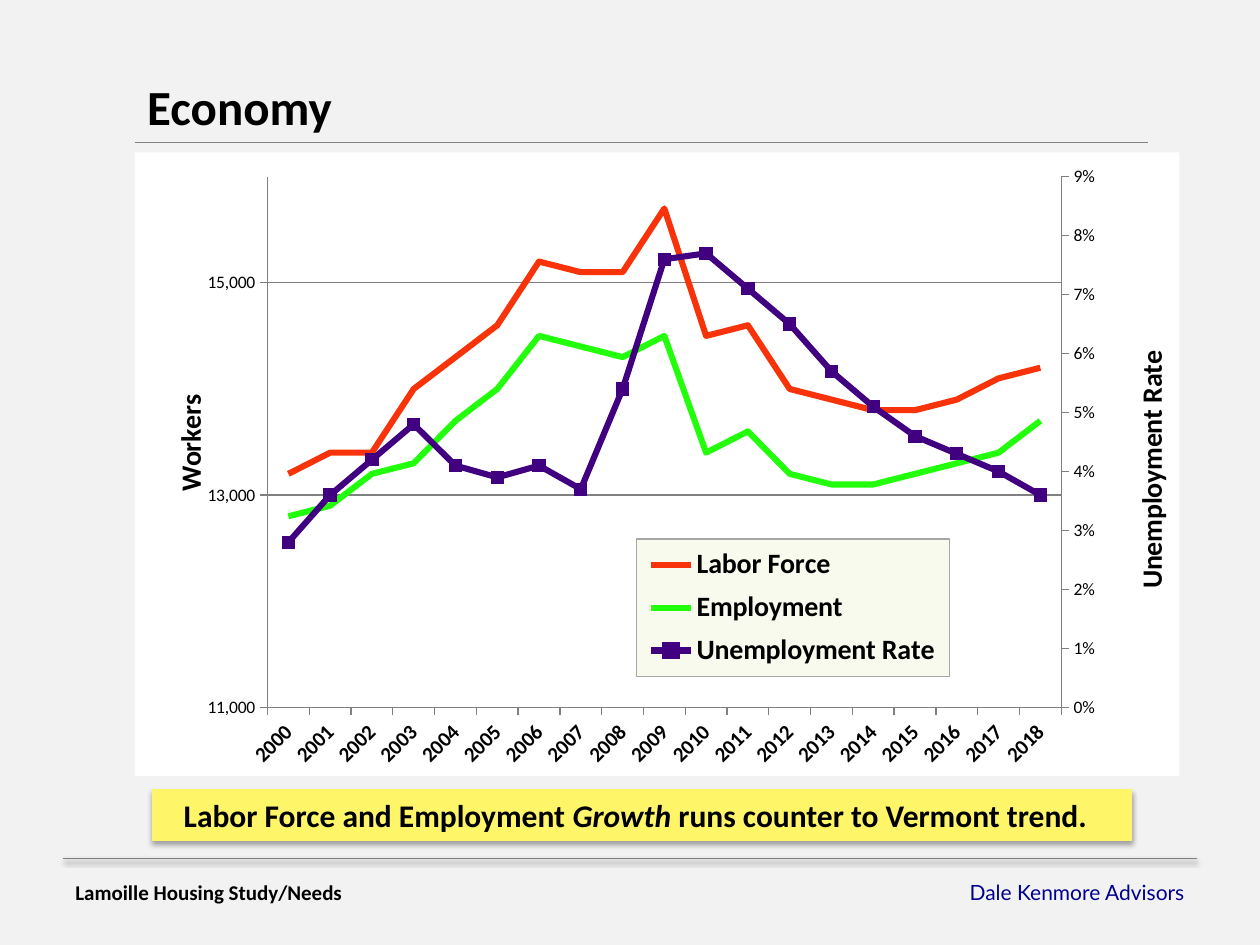
from copy import deepcopy
from lxml import etree
from pptx import Presentation
from pptx.chart.axis import ValueAxis
from pptx.chart.data import CategoryChartData
from pptx.dml.color import RGBColor
from pptx.enum.chart import XL_CHART_TYPE, XL_LEGEND_POSITION, XL_MARKER_STYLE
from pptx.enum.shapes import MSO_CONNECTOR, MSO_SHAPE
from pptx.enum.text import MSO_AUTO_SIZE, PP_ALIGN
from pptx.oxml import parse_xml
from pptx.oxml.ns import nsdecls, qn
from pptx.util import Inches, Pt

COLORS = {
    "page": "F2F2F2", "white": "FFFFFF", "ink": "000000", "rule": "808080",
    "navy": "000090", "note": "FFF569", "labor": "F83309", "jobs": "22FE0B",
    "rate": "400080", "key": "F8FAED", "edge": "A6A6A6",
}
YEARS = [str(year) for year in range(2000, 2019)]
LABOR = [13200, 13400, 13400, 14000, 14300, 14600, 15200, 15100, 15100, 15700,
         14500, 14600, 14000, 13900, 13800, 13800, 13900, 14100, 14200]
JOBS = [12800, 12900, 13200, 13300, 13700, 14000, 14500, 14400, 14300, 14500,
        13400, 13600, 13200, 13100, 13100, 13200, 13300, 13400, 13700]
RATE = [0.028, 0.036, 0.042, 0.048, 0.041, 0.039, 0.041, 0.037, 0.054, 0.076,
        0.077, 0.071, 0.065, 0.057, 0.051, 0.046, 0.043, 0.04, 0.036]


def color(name):
    return RGBColor.from_string(COLORS[name])


def shade(shape, alpha):
    """Give the shape a soft shadow below it, or none when alpha is 0."""
    glow = (f'<a:outerShdw blurRad="{Pt(3.1)}" dist="{Pt(1.8)}" dir="5400000" rotWithShape="0">'
            f'<a:srgbClr val="{COLORS["ink"]}"><a:alpha val="{alpha * 1000}"/></a:srgbClr>'
            '</a:outerShdw>') if alpha else ""
    props = shape._element.spPr
    for old in props.findall(qn("a:effectLst")):
        props.remove(old)
    props.append(parse_xml(f'<a:effectLst {nsdecls("a")}>{glow}</a:effectLst>'))


def place(node, left, top, width=None, height=None, inner=False):
    """Set a manual layout, in fractions of the chart."""
    for old in node.findall(qn("c:layout")):
        node.remove(old)
    parts = [("layoutTarget", "inner")] if inner else []
    parts += [("xMode", "edge"), ("yMode", "edge"), ("x", left), ("y", top)]
    if width:
        parts += [("w", width), ("h", height)]
    body = "".join(f'<c:{tag} val="{val}"/>' for tag, val in parts)
    layout = parse_xml(f'<c:layout {nsdecls("c")}><c:manualLayout>{body}'
                       '</c:manualLayout></c:layout>')
    over = node.find(qn("c:overlay"))
    if over is None:
        node.insert(0, layout)
    else:
        over.addprevious(layout)


def paint(node, fill, line=None):
    """Fill and outline a chart part that already has its text style."""
    edge = (f'<a:solidFill><a:srgbClr val="{COLORS[line]}"/></a:solidFill>'
            if line else "<a:noFill/>")
    node.find(qn("c:txPr")).addprevious(parse_xml(
        f'<c:spPr {nsdecls("c", "a")}><a:solidFill><a:srgbClr val="{COLORS[fill]}"/>'
        f'</a:solidFill><a:ln w="{Pt(0.75)}">{edge}</a:ln></c:spPr>'))


def title(axis, text, left, top):
    axis.has_title = True
    frame = axis.axis_title.text_frame
    frame.text = text
    font = frame.paragraphs[0].font
    font.size, font.bold = Pt(16), True
    body = frame._txBody.find(qn("a:bodyPr"))
    body.set("rot", "-5400000")
    body.set("vert", "horz")
    place(axis.axis_title._element, left, top)


def ruled(form):
    form.line.color.rgb = color("rule")
    form.line.width = Pt(0.75)


def split(chart):
    """Move the last series to a second axis on the right, and return that axis."""
    area = chart._chartSpace.chart.plotArea
    first = area.find(qn("c:lineChart"))
    other = deepcopy(first)
    for node in other.findall(qn("c:ser"))[:-1]:
        other.remove(node)
    first.remove(first.findall(qn("c:ser"))[-1])
    first.addnext(other)
    cat, val = (deepcopy(area.find(qn(tag))) for tag in ("c:catAx", "c:valAx"))
    ids = {node.get("val"): str(7001 + i)
           for i, node in enumerate(other.findall(qn("c:axId")))}
    for part in (other, cat, val):
        for node in part.iter(qn("c:axId"), qn("c:crossAx")):
            node.set("val", ids[node.get("val")])
    last = area.findall(qn("c:valAx"))[-1]
    last.addnext(val)
    val.addnext(cat)
    cat.find(qn("c:delete")).set("val", "1")
    val.find(qn("c:axPos")).set("val", "r")
    val.find(qn("c:crosses")).set("val", "max")
    return ValueAxis(val)


class Deck:
    def __init__(self, font="Calibri"):
        self.font = font
        self.show = Presentation()
        self.show.slide_width, self.show.slide_height = Inches(10), Inches(7.5)
        self.slide = self.show.slides.add_slide(self.show.slide_layouts[6])
        self.slide.background.fill.solid()
        self.slide.background.fill.fore_color.rgb = color("page")

    def text(self, box, runs, size, ink="ink", bold=True, face=None, align=PP_ALIGN.LEFT):
        """Write (text, italic) runs in one paragraph."""
        frame = self.slide.shapes.add_textbox(*map(Inches, box)).text_frame
        frame.word_wrap = True
        frame.auto_size = MSO_AUTO_SIZE.SHAPE_TO_FIT_TEXT
        para = frame.paragraphs[0]
        para.alignment = align
        font = para.font
        font.name, font.size, font.bold = face or self.font, Pt(size), bold
        font.color.rgb = color(ink)
        for words, slant in runs:
            run = para.add_run()
            run.text = words
            if slant:
                run.font.italic = True

    def rule(self, left, right, top, width, alpha=0):
        line = self.slide.shapes.add_connector(
            MSO_CONNECTOR.STRAIGHT, *map(Inches, (left, top, right, top)))
        line.line.color.rgb = color("rule")
        line.line.width = Pt(width)
        shade(line, alpha)

    def band(self, box, fill):
        shape = self.slide.shapes.add_shape(MSO_SHAPE.RECTANGLE, *map(Inches, box))
        shape.fill.solid()
        shape.fill.fore_color.rgb = shape.line.color.rgb = color(fill)
        shape.line.width = Pt(0.75)
        shade(shape, 35)

    def chart(self, box):
        data = CategoryChartData()
        data.categories = YEARS
        data.add_series("Labor Force", LABOR, "#,##0")
        data.add_series("Employment", JOBS, "#,##0")
        data.add_series("Unemployment Rate", RATE, "0.0%")
        chart = self.slide.shapes.add_chart(
            XL_CHART_TYPE.LINE, *map(Inches, box), data).chart
        chart.has_title = False
        chart.font.name, chart.font.size = self.font, Pt(10)
        chart.font.color.rgb = color("ink")
        paint(chart._chartSpace, "white")

        plot = chart.plots[0]
        plot.vary_by_categories = False
        for series, name in zip(plot.series, ("labor", "jobs", "rate")):
            series.smooth = False
            series.format.line.color.rgb = color(name)
            series.format.line.width = Pt(3.5)
        mark = series.marker
        mark.style, mark.size = XL_MARKER_STYLE.SQUARE, 7
        mark.format.fill.solid()
        mark.format.fill.fore_color.rgb = color("rate")
        mark.format.line.color.rgb = color("rate")

        years, left = chart.category_axis, chart.value_axis
        ruled(years.format)
        ruled(left.format)
        font = years.tick_labels.font
        font.size, font.bold = Pt(12), True
        years._element.find(qn("c:txPr")).find(qn("a:bodyPr")).set("rot", "-2700000")
        right = split(chart)
        right.has_major_gridlines = False
        ruled(left.major_gridlines.format)
        scales = ((left, 11000, 16000, 2000, "#,##0"), (right, 0, 0.09, 0.01, "0%"))
        for axis, low, high, step, form in scales:
            axis.minimum_scale, axis.maximum_scale, axis.major_unit = low, high, step
            axis.tick_labels.number_format = form
            axis.tick_labels.number_format_is_linked = False
        title(left, "Workers", 0.03, 0.38)
        title(right, "Unemployment Rate", 0.95, 0.31)

        chart.has_legend = True
        key = chart.legend
        key.position = XL_LEGEND_POSITION.RIGHT
        key.include_in_layout = False
        key.font.size, key.font.bold = Pt(16), True
        paint(key._element, "key", "edge")
        place(key._element, 0.48, 0.62, 0.3, 0.22)
        place(chart._chartSpace.chart.plotArea, 0.127, 0.039, 0.76, 0.851, inner=True)


deck = Deck()
deck.rule(0.5, 9.5, 6.81, 0.5, alpha=38)
deck.text((6.54, 6.93, 2.96, 0.3), [("Dale Kenmore Advisors", False)], 12,
          "navy", False, "Lato", PP_ALIGN.RIGHT)
deck.text((0.5, 6.93, 2.96, 0.3), [("Lamoille Housing Study/Needs", False)], 12)
deck.text((1.07, 0.56, 4.8, 0.57), [("Economy", False)], 28)
deck.rule(1.07, 9.11, 1.13, 1)
deck.chart((1.07, 1.21, 8.29, 4.95))
deck.band((1.21, 6.27, 7.77, 0.4), "note")
deck.text((1.36, 6.27, 7.75, 0.4), [("Labor Force and Employment ", False), ("Growth", True),
                                    (" runs counter to Vermont trend.", False)], 18)
deck.show.save("out.pptx")
